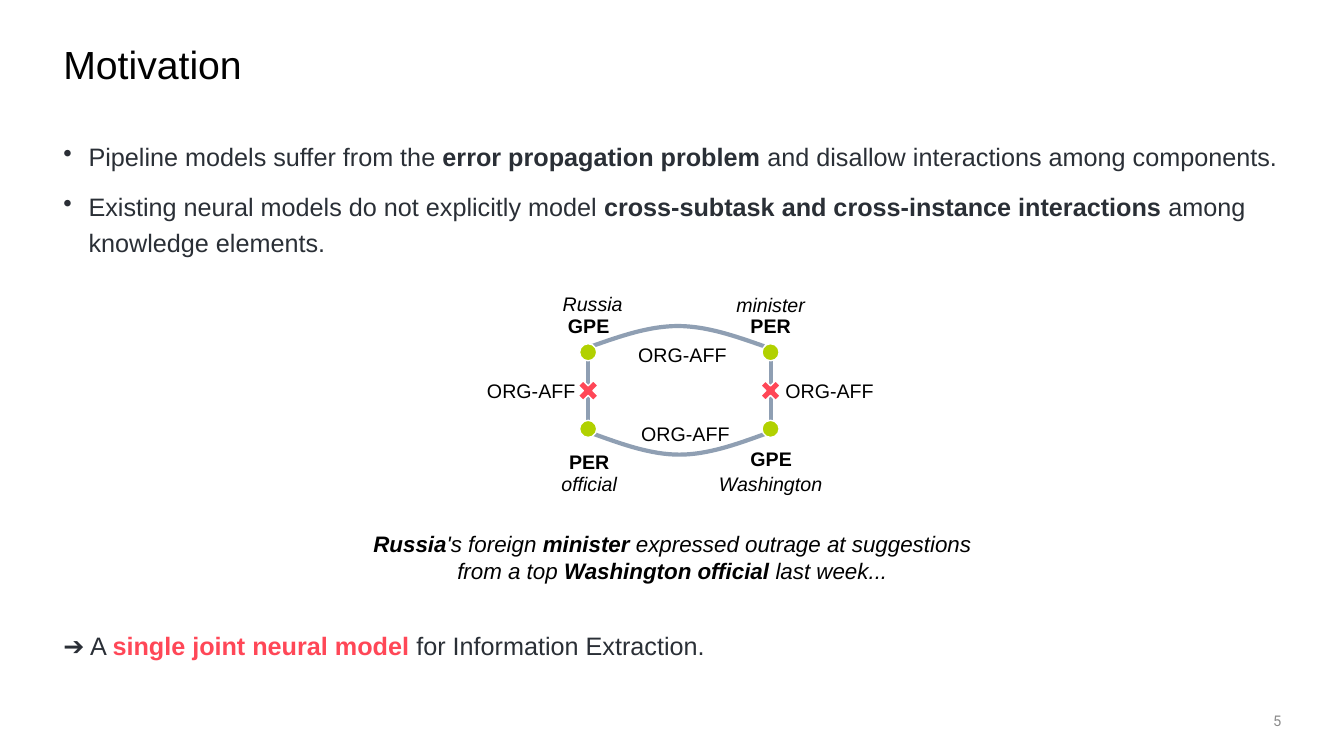
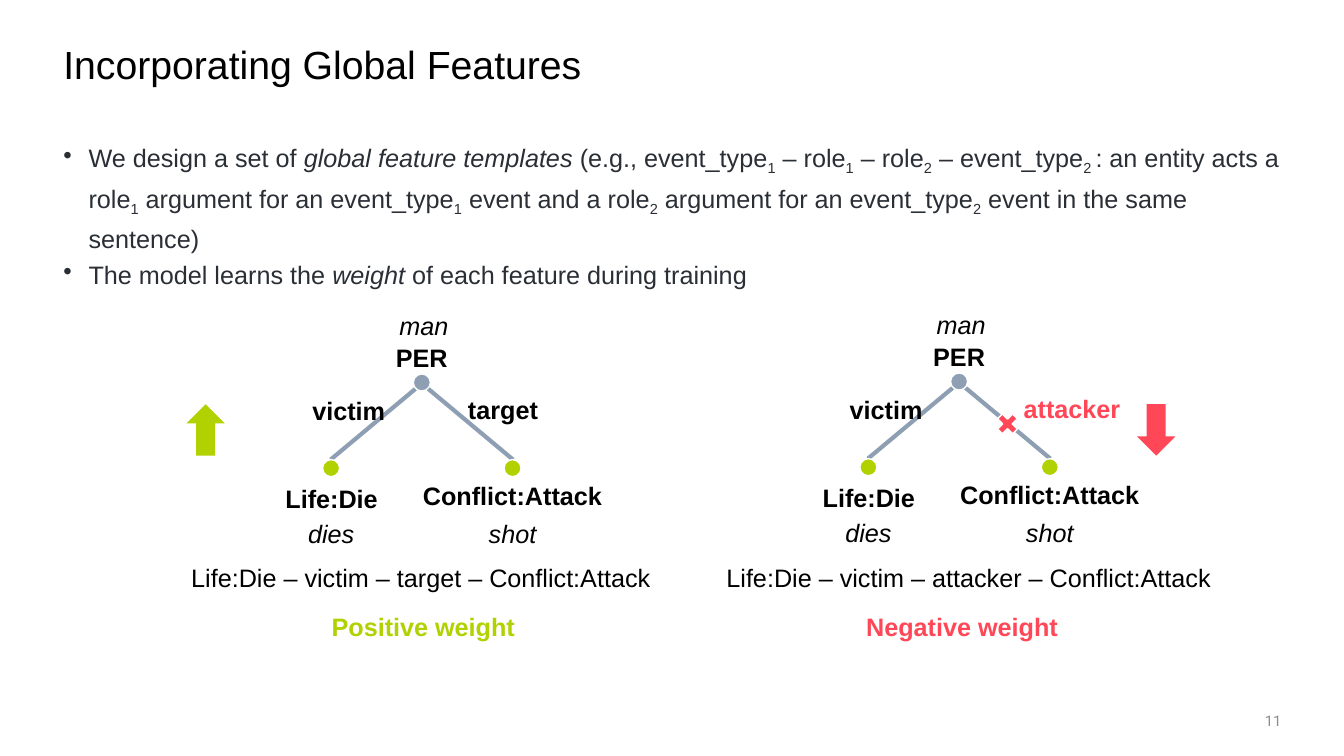
from dataclasses import dataclass
from typing import NamedTuple, Optional, Sequence

import lxml.etree
import pptx
import pptx.dml.color
import pptx.enum.shapes
import pptx.enum.text
import pptx.oxml.ns
import pptx.shapes.autoshape
import pptx.slide
import pptx.text.text
import pptx.util

ALIGN = pptx.enum.text.PP_ALIGN
ANCHOR = pptx.enum.text.MSO_ANCHOR
SHAPE = pptx.enum.shapes.MSO_SHAPE


@dataclass(frozen=True)
class Theme:
    font: str = "Arial"
    number_font: str = "Roboto"
    black: str = "000000"
    white: str = "FFFFFF"
    body: str = "2A2F36"
    muted: str = "8C8C8C"
    edge: str = "8F9FB3"
    green: str = "B1D100"
    red: str = "FF4757"
    title_size: float = 28
    body_size: float = 18
    quote_size: float = 16
    small_size: float = 14
    number_size: float = 10.5
    edge_width: float = 3
    outline_width: float = 1


@dataclass(frozen=True)
class Grid:
    columns: float = 133.33
    rows: float = 75
    unit: int = pptx.util.Inches(0.1)

    def length(self, cells: float) -> pptx.util.Emu:
        return pptx.util.Emu(round(cells * self.unit))


THEME = Theme()
GRID = Grid()
MARGIN = 5.3
CONTENT_WIDTH = 122.8
NODE_SIZE = 1.7
CROSS_SIZE = 2.1
ARROW_WIDTH, ARROW_HEIGHT = 3.8, 5.1
ARC_STEPS = 32


class Box(NamedTuple):
    left: float
    top: float
    width: float
    height: float


class Run(NamedTuple):
    text: str
    bold: Optional[bool] = None
    italic: Optional[bool] = None
    color: Optional[str] = None
    subscript: bool = False


class Style(NamedTuple):
    size: float
    color: str = THEME.black
    bold: bool = False
    italic: bool = False
    font: str = THEME.font
    align: Optional[ALIGN] = None
    line_spacing: Optional[float] = None
    space_before: float = 0
    bullet: bool = False


class Label(NamedTuple):
    text: str
    center: float
    top: float
    width: float
    bold: bool = False
    italic: bool = False
    color: str = THEME.black


@dataclass(frozen=True)
class Tree:
    column: float
    row: float
    color: str
    arrow_center: float
    arrow_turn: float
    role: str
    role_offset: float
    role_color: str
    crossed: bool
    feature_center: float
    weight: str
    weight_center: float


Paragraphs = Sequence[Sequence[Run]]

TITLE = Style(THEME.title_size, line_spacing=0.9)
BODY = Style(THEME.body_size, THEME.body, line_spacing=1.2)
BULLETS = BODY._replace(bullet=True)
QUOTE = Style(THEME.quote_size, italic=True, align=ALIGN.CENTER)
NUMBER = Style(THEME.number_size, THEME.muted, font=THEME.number_font, align=ALIGN.RIGHT)

NODE_COLUMNS = (58.35, 76.45)
NODE_ROWS = (34.95, 42.55)
GRAPH_LABELS = (
    Label("GPE", 58.4, 30.7, 6.2, bold=True),
    Label("PER", 76.45, 30.7, 6.2, bold=True),
    Label("PER", 58.45, 44.1, 6.2, bold=True),
    Label("GPE", 76.5, 43.8, 6.2, bold=True),
    Label("Russia", 58.8, 28.5, 8, italic=True),
    Label("minister", 76.45, 28.6, 8.9, italic=True),
    Label("official", 58.45, 46.3, 7.5, italic=True),
    Label("Washington", 76.45, 46.3, 12.3, italic=True),
    *(Label("ORG-AFF", center, top, 10.8)
      for center, top in ((67.7, 33.5), (68, 41.4), (82.3, 37.1), (52.7, 37.1))),
)
TREES = (
    Tree(41.85, 37.95, THEME.green, 20.4, 180, "target", 8.05, THEME.black, False,
         41.75, "Positive weight", 42),
    Tree(95.15, 37.85, THEME.red, 114.7, 0, "attacker", 11.2, THEME.red, True,
         96.1, "Negative weight", 95.45),
)


def rgb(color: str) -> pptx.dml.color.RGBColor:
    return pptx.dml.color.RGBColor.from_string(color)


def with_subscripts(text: str) -> list[Run]:
    return [Run(part, subscript=index % 2 == 1) for index, part in enumerate(text.split("|"))]


def fill_paragraph(paragraph: pptx.text.text._Paragraph, runs: Sequence[Run], style: Style) -> None:
    if style.bullet:
        properties = paragraph._p.get_or_add_pPr()
        properties.set("marL", str(pptx.util.Inches(0.25)))
        properties.set("indent", str(-pptx.util.Inches(0.25)))
        bullet = lxml.etree.SubElement(properties, pptx.oxml.ns.qn("a:buChar"))
        bullet.set("char", "•")
    paragraph.alignment = style.align
    paragraph.line_spacing = style.line_spacing
    font = paragraph.font
    font.name, font.size = style.font, pptx.util.Pt(style.size)
    font.bold, font.italic = style.bold, style.italic
    font.color.rgb = rgb(style.color)
    for piece in runs:
        run = paragraph.add_run()
        run.text = piece.text
        if piece.bold is not None:
            run.font.bold = piece.bold
        if piece.italic is not None:
            run.font.italic = piece.italic
        if piece.color:
            run.font.color.rgb = rgb(piece.color)
        if piece.subscript:
            run._r.get_or_add_rPr().set("baseline", "-25000")


def add_text(slide: pptx.slide.Slide, box: Box, paragraphs: Paragraphs, style: Style,
             anchor: ANCHOR = ANCHOR.TOP, wrap: bool = True) -> None:
    frame = slide.shapes.add_textbox(*map(GRID.length, box)).text_frame
    frame.word_wrap = wrap
    frame.vertical_anchor = anchor
    for index, runs in enumerate(paragraphs):
        paragraph = frame.add_paragraph() if index else frame.paragraphs[0]
        fill_paragraph(paragraph, runs, style)
        if index:
            paragraph.space_before = pptx.util.Pt(style.space_before)


def add_label(slide: pptx.slide.Slide, label: Label, size: float, height: float) -> None:
    box = Box(label.center - label.width / 2, label.top, label.width, height)
    style = Style(size, label.color, label.bold, label.italic, align=ALIGN.CENTER)
    add_text(slide, box, [[Run(label.text)]], style, wrap=False)


def add_mark(slide: pptx.slide.Slide, kind: SHAPE, column: float, row: float, width: float,
             height: float, color: str, outlined: bool = True) -> pptx.shapes.autoshape.Shape:
    box = Box(column - width / 2, row - height / 2, width, height)
    shape = slide.shapes.add_shape(kind, *map(GRID.length, box))
    shape.shadow.inherit = False
    shape.fill.solid()
    shape.fill.fore_color.rgb = rgb(color)
    if outlined:
        shape.line.color.rgb = rgb(THEME.white)
        shape.line.width = pptx.util.Pt(THEME.outline_width)
    else:
        shape.line.fill.background()
    return shape


def add_node(slide: pptx.slide.Slide, column: float, row: float, color: str) -> None:
    add_mark(slide, SHAPE.OVAL, column, row, NODE_SIZE, NODE_SIZE, color)


def add_cross(slide: pptx.slide.Slide, column: float, row: float) -> None:
    cross = add_mark(slide, SHAPE.CROSS, column, row, CROSS_SIZE, CROSS_SIZE, THEME.red)
    cross.adjustments[0] = 0.34
    cross.rotation = 315


def add_edge(slide: pptx.slide.Slide, *ends: float) -> None:
    connector = slide.shapes.add_connector(
        pptx.enum.shapes.MSO_CONNECTOR.STRAIGHT, *map(GRID.length, ends))
    connector.line.color.rgb = rgb(THEME.edge)
    connector.line.width = pptx.util.Pt(THEME.edge_width)
    lxml.etree.SubElement(connector._element.spPr, pptx.oxml.ns.qn("a:effectLst"))


def add_arc(slide: pptx.slide.Slide, left: float, row: float, width: float, bulge: float) -> None:
    points = []
    for step in range(ARC_STEPS + 1):
        share = step / ARC_STEPS
        rise = 1 - abs(2 * share - 1)
        height = 1.5 * rise * (1 - rise) ** 2 + 3 * rise ** 2 * (1 - rise) + rise ** 3
        points.append((GRID.length(left + width * share), GRID.length(row + bulge * height)))
    builder = slide.shapes.build_freeform(*points[0])
    builder.add_line_segments(points[1:], close=False)
    arc = builder.convert_to_shape()
    arc.shadow.inherit = False
    arc.fill.background()
    arc.line.color.rgb = rgb(THEME.edge)
    arc.line.width = pptx.util.Pt(THEME.edge_width)


def add_slide(presentation: pptx.presentation.Presentation, title: str, number: int) -> pptx.slide.Slide:
    slide = presentation.slides.add_slide(presentation.slide_layouts[6])
    add_text(slide, Box(MARGIN, 4, CONTENT_WIDTH, 6.9), [[Run(title)]], TITLE)
    add_text(slide, Box(94.2, 69.5, 33.9, 4), [[Run(str(number))]], NUMBER, ANCHOR.MIDDLE)
    return slide


def add_tree(slide: pptx.slide.Slide, tree: Tree) -> None:
    column, row = tree.column, tree.row
    for side in (-1, 1):
        add_edge(slide, column + side * 0.6, row + 0.6, column + side * 9.05, row + 7.65)
        add_node(slide, column + side * 9, row + 8.5, THEME.green)
    add_node(slide, column, row, THEME.edge)
    if tree.crossed:
        add_cross(slide, column + 4.8, row + 4.2)
    add_mark(slide, SHAPE.DOWN_ARROW, tree.arrow_center, 42.65, ARROW_WIDTH, ARROW_HEIGHT,
             tree.color, outlined=False).rotation = tree.arrow_turn
    labels = (
        Label("man", column + 0.2, row - 7.65, 13.4, italic=True),
        Label("PER", column, row - 4.45, 12, bold=True),
        Label("victim", column - 7.25, row + 0.8, 12, bold=True),
        Label(tree.role, column + tree.role_offset, row + 0.65, 14, True, color=tree.role_color),
        Label("Life:Die", column - 8.95, row + 9.55, 15.8, bold=True),
        Label("Conflict:Attack", column + 9, row + 9.25, 21.7, bold=True),
        Label("dies", column - 9, row + 12.95, 13.4, italic=True),
        Label("shot", column + 9, row + 12.95, 12.4, italic=True),
        Label(f"Life:Die – victim – {tree.role} – Conflict:Attack", tree.feature_center, 55.3, 50.5),
        Label(tree.weight, tree.weight_center, 60.2, 27, bold=True, color=tree.color),
    )
    for label in labels:
        add_label(slide, label, THEME.body_size, 4)


def build_motivation(presentation: pptx.presentation.Presentation) -> None:
    slide = add_slide(presentation, "Motivation", 5)
    add_text(slide, Box(MARGIN, 12.9, CONTENT_WIDTH, 14), [
        [Run("Pipeline models suffer from the "), Run("error propagation problem", bold=True),
         Run(" and disallow interactions among components.")],
        [Run("Existing neural models do not explicitly model "),
         Run("cross-subtask and cross-instance interactions", bold=True),
         Run(" among knowledge elements.")],
    ], BULLETS._replace(space_before=10))
    add_arc(slide, 58.7, 34.35, 17.1, -2)
    add_arc(slide, 58.9, 43.05, 17, 2.05)
    for column in NODE_COLUMNS:
        add_edge(slide, column, 35.7, column, 41.7)
        for row in NODE_ROWS:
            add_node(slide, column, row, THEME.green)
        add_cross(slide, column, sum(NODE_ROWS) / 2)
    for label in GRAPH_LABELS:
        add_label(slide, label, THEME.small_size, 3.4)
    add_text(slide, Box(35.9, 52.1, 61.6, 6.4), [[
        Run("Russia", bold=True), Run("'s foreign "), Run("minister", bold=True),
        Run(" expressed outrage at suggestions from a top "),
        Run("Washington official", bold=True), Run(" last week..."),
    ]], QUOTE)
    add_text(slide, Box(MARGIN, 61.4, CONTENT_WIDTH, 5), [[
        Run("➔ A "), Run("single joint neural model ", bold=True, color=THEME.red),
        Run("for Information Extraction."),
    ]], BODY)


def build_global_features(presentation: pptx.presentation.Presentation) -> None:
    slide = add_slide(presentation, "Incorporating Global Features", 11)
    add_text(slide, Box(MARGIN, 12.9, CONTENT_WIDTH, 16.3), [
        [Run("We design a set of "), Run("global feature templates", italic=True), *with_subscripts(
            " (e.g., event_type|1| – role|1| – role|2| – event_type|2 |: an entity acts a role|1"
            "| argument for an event_type|1| event and a role|2| argument for an event_type|2"
            "| event in the same sentence)")],
        [Run("The model learns the "), Run("weight", italic=True),
         Run(" of each feature during training")],
    ], BULLETS)
    for tree in TREES:
        add_tree(slide, tree)


def main() -> None:
    presentation = pptx.Presentation()
    presentation.slide_width = GRID.length(GRID.columns)
    presentation.slide_height = GRID.length(GRID.rows)
    build_motivation(presentation)
    build_global_features(presentation)
    presentation.save("out.pptx")


if __name__ == "__main__":
    main()
